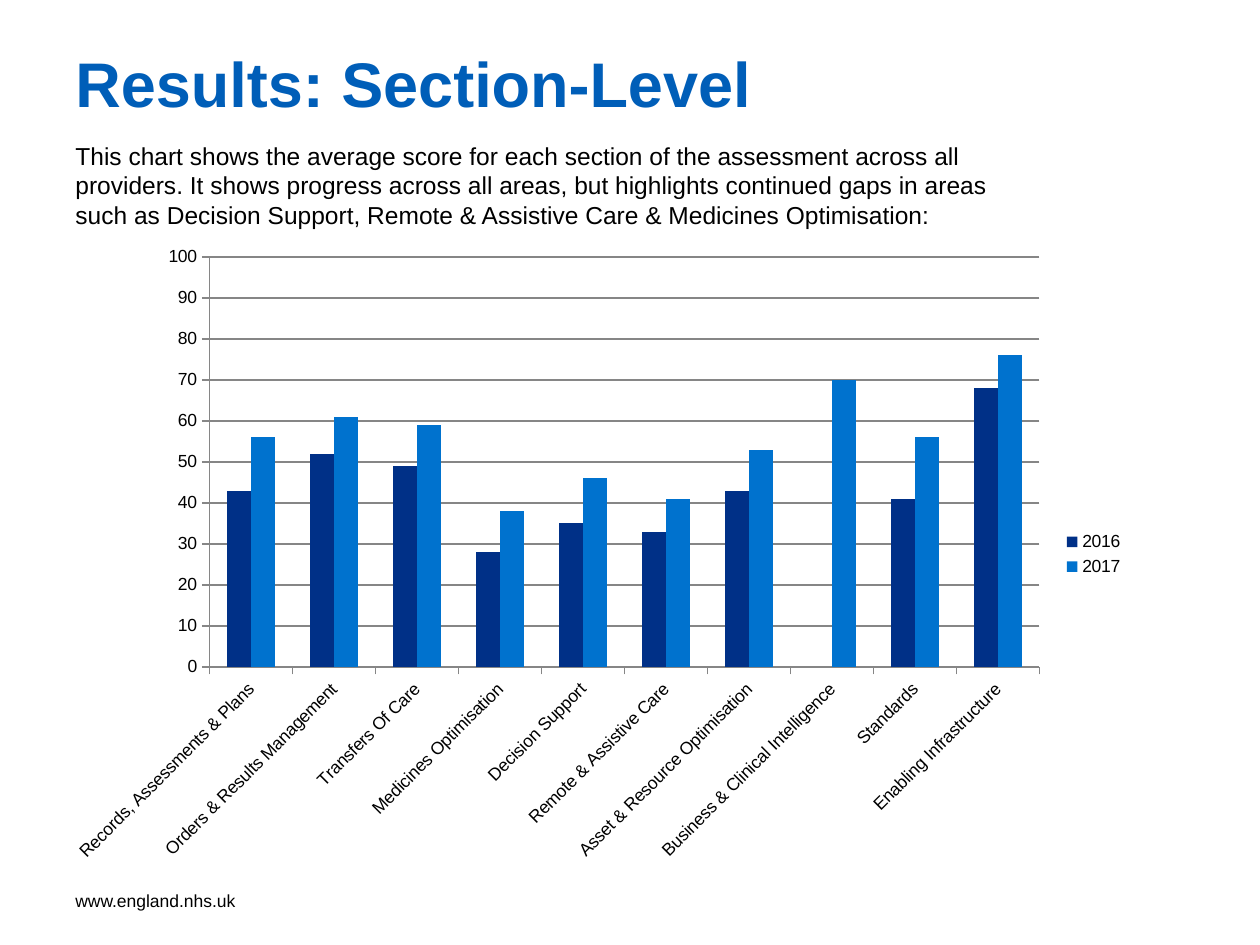
"""Build the section-level results slide with its clustered column chart."""
from pptx import Presentation
from pptx.chart.data import CategoryChartData
from pptx.dml.color import RGBColor
from pptx.enum.chart import XL_CHART_TYPE, XL_LEGEND_POSITION, XL_TICK_MARK
from pptx.enum.text import MSO_ANCHOR
from pptx.util import Inches, Pt

COLUMNS = XL_CHART_TYPE.COLUMN_CLUSTERED
LEGEND_RIGHT = XL_LEGEND_POSITION.RIGHT
TICK_OUT = XL_TICK_MARK.OUTSIDE
TOP, MIDDLE = MSO_ANCHOR.TOP, MSO_ANCHOR.MIDDLE

FONT = "Arial"
BLACK = RGBColor(0x00, 0x00, 0x00)
GREY = RGBColor(0x86, 0x86, 0x86)
TITLE_BLUE = RGBColor(0x00, 0x5E, 0xB8)
DARK_BLUE = RGBColor(0x00, 0x30, 0x87)
BRIGHT_BLUE = RGBColor(0x00, 0x72, 0xCE)

TITLE = "Results: Section-Level"
INTRO = (
    "This chart shows the average score for each section of the assessment "
    "across all providers. It shows progress across all areas, but highlights "
    "continued gaps in areas such as Decision Support, Remote & Assistive Care "
    "& Medicines Optimisation:"
)
FOOTER = "www.england.nhs.uk"
SCORES = [
    ("Records, Assessments & Plans", 43, 56),
    ("Orders & Results Management", 52, 61),
    ("Transfers Of Care", 49, 59),
    ("Medicines Optimisation", 28, 38),
    ("Decision Support", 35, 46),
    ("Remote & Assistive Care", 33, 41),
    ("Asset & Resource Optimisation", 43, 53),
    ("Business & Clinical Intelligence", None, 70),
    ("Standards", 41, 56),
    ("Enabling Infrastructure", 68, 76),
]
YEARS = [("2016", DARK_BLUE), ("2017", BRIGHT_BLUE)]
CHART_BOX = (0.43, 1.86, 8.59, 5.08)


def add_text(slide, text, box, size, color=BLACK, bold=False, anchor=MIDDLE):
    frame = slide.shapes.add_textbox(*map(Inches, box)).text_frame
    frame.word_wrap = True
    frame.vertical_anchor = anchor
    run = frame.paragraphs[0].add_run()
    run.text = text
    run.font.name = FONT
    run.font.size = Pt(size)
    run.font.bold = bold
    run.font.color.rgb = color


def add_scores_chart(slide):
    sections, *yearly_scores = zip(*SCORES)
    data = CategoryChartData(number_format="0")
    data.categories = sections
    for (year, _), scores in zip(YEARS, yearly_scores):
        data.add_series(year, scores)
    chart = slide.shapes.add_chart(COLUMNS, *map(Inches, CHART_BOX), data).chart
    chart.has_title = False
    chart.font.name = FONT
    chart.font.size = Pt(10)
    chart.font.color.rgb = BLACK

    plot = chart.plots[0]
    plot.gap_width = 150
    plot.overlap = 0
    plot.vary_by_categories = False
    for series, (_, color) in zip(plot.series, YEARS):
        series.format.fill.solid()
        series.format.fill.fore_color.rgb = color

    section_axis, score_axis = chart.category_axis, chart.value_axis
    score_axis.minimum_scale = 0
    score_axis.maximum_scale = 100
    score_axis.major_unit = 10
    score_axis.has_major_gridlines = True
    for axis in (section_axis, score_axis):
        axis.major_tick_mark = TICK_OUT
        axis.tick_labels.font.size = Pt(10)
    section_axis._element.txPr.bodyPr.set("rot", str(-45 * 60000))
    for part in (section_axis, score_axis, score_axis.major_gridlines):
        part.format.line.color.rgb = GREY
        part.format.line.width = Pt(0.75)

    chart.has_legend = True
    chart.legend.position = LEGEND_RIGHT
    chart.legend.include_in_layout = False


def main():
    deck = Presentation()
    deck.slide_width, deck.slide_height = Inches(10), Inches(7.5)
    slide = deck.slides.add_slide(deck.slide_layouts[6])
    add_text(slide, FOOTER, (0.5, 6.95, 2.33, 0.4), 10)
    add_scores_chart(slide)
    add_text(slide, INTRO, (0.5, 1.07, 7.89, 0.94), 14, anchor=TOP)
    add_text(slide, TITLE, (0.5, 0.29, 8.05, 0.73), 36, TITLE_BLUE, bold=True)
    deck.save("out.pptx")


if __name__ == "__main__":
    main()
